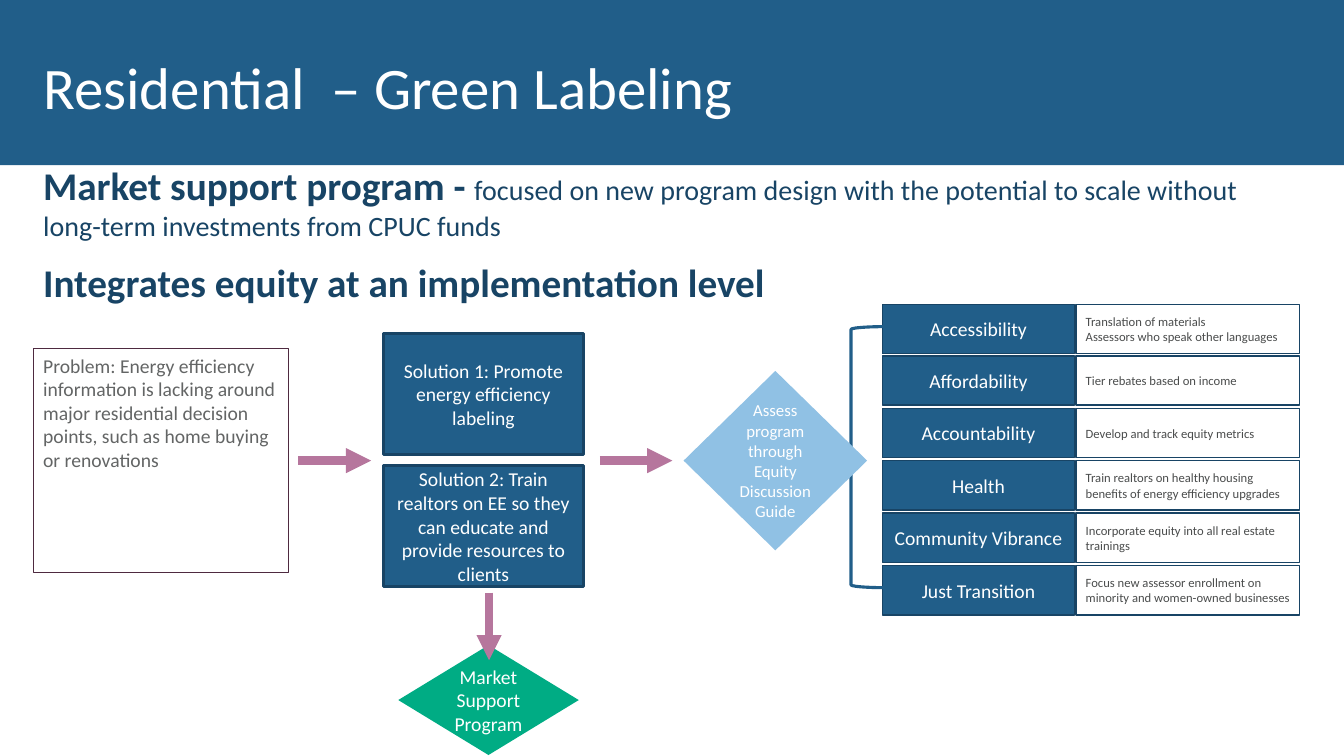
from lxml import etree
from pptx import Presentation
from pptx import util as u
from pptx.dml.color import RGBColor
from pptx.enum import shapes, text
from pptx.oxml.ns import qn

WHITE = RGBColor(0xFF, 0xFF, 0xFF)
BLUE = RGBColor(0x21, 0x5E, 0x89)
NAVY = RGBColor(0x18, 0x44, 0x65)
SKY = RGBColor(0x90, 0xC1, 0xE4)
GREEN = RGBColor(0x00, 0xAC, 0x84)
MAUVE = RGBColor(0xB6, 0x76, 0x9D)
PLUM = RGBColor(0x4E, 0x2A, 0x40)
GREY = RGBColor(0x63, 0x65, 0x65)
DARK_GREY = RGBColor(0x4A, 0x4C, 0x4C)

Kind = shapes.MSO_SHAPE
Anchor = text.MSO_ANCHOR
Align = text.PP_ALIGN

EQUITY_GOALS = [
    ("Accessibility", ["Translation of materials", "Assessors who speak other languages"]),
    ("Affordability", ["Tier rebates based on income"]),
    ("Accountability", ["Develop and track equity metrics"]),
    ("Health", ["Train realtors on healthy housing benefits of energy efficiency upgrades"]),
    ("Community Vibrance", ["Incorporate equity into all real estate trainings"]),
    ("Just Transition", ["Focus new assessor enrollment on minority and women-owned businesses"]),
]
SOLUTIONS = [
    "Solution 1: Promote energy efficiency labeling",
    "Solution 2: Train realtors on EE so they can educate and provide resources to clients",
]
ARROWS = [(296, 457, 368, 457), (595, 457, 667, 457), (485, 588, 485, 655)]


def apply(target, formats):
    for name, value in formats.items():
        setattr(target, name, value)


class SlideBuilder:
    font_name = "Calibri"
    px = 9144

    def __init__(self, presentation):
        apply(presentation, {"slide_width": self.px * 1333, "slide_height": self.px * 750})
        self.slide = presentation.slides.add_slide(presentation.slide_layouts[5])

    def scale(self, *lengths):
        return [u.Emu(length * self.px) for length in lengths]

    def fill_text(self, frame, paragraphs, color, anchor, align=Align.LEFT, margins=(10, 5), spacing=None):
        horizontal, vertical = self.scale(*margins)
        apply(frame, {
            "word_wrap": True, "auto_size": text.MSO_AUTO_SIZE.NONE, "vertical_anchor": anchor,
            "margin_left": horizontal, "margin_right": horizontal,
            "margin_top": vertical, "margin_bottom": vertical,
        })
        for index, runs in enumerate(paragraphs):
            paragraph = frame.add_paragraph() if index else frame.paragraphs[0]
            apply(paragraph, {"alignment": align, **(spacing or {})})
            for words, size, bold in runs:
                run = paragraph.add_run()
                run.text = words
                apply(run.font, {"name": self.font_name, "size": u.Pt(size), "bold": bold})
                run.font.color.rgb = color

    def title(self, box, words, size, band):
        title = self.slide.shapes.title
        apply(title, dict(zip(("left", "top", "width", "height"), self.scale(*box))))
        self.fill_text(title.text_frame, [[(words, size, False)]], WHITE, Anchor.MIDDLE,
                       spacing={"line_spacing": 0.9})
        band.element.addnext(title.element)

    def text_box(self, box, paragraphs, color, spacing):
        shape = self.slide.shapes.add_textbox(*self.scale(*box))
        self.fill_text(shape.text_frame, paragraphs, color, Anchor.TOP, spacing=spacing)

    def shape(self, kind, box, fill=None, line=None, line_width=1):
        shape = self.slide.shapes.add_shape(kind, *self.scale(*box))
        shape.shadow.inherit = False
        if fill is None:
            shape.fill.background()
        else:
            shape.fill.solid()
            shape.fill.fore_color.rgb = fill
        if line is None:
            shape.line.fill.background()
        else:
            shape.line.color.rgb = line
            shape.line.width = u.Pt(line_width)
        return shape

    def label(self, shape, lines, size=14, color=WHITE, anchor=Anchor.MIDDLE,
              align=Align.CENTER, margins=(10, 5)):
        paragraphs = [[(line, size, False)] for line in lines]
        self.fill_text(shape.text_frame, paragraphs, color, anchor, align, margins)

    def arrow(self, ends):
        connector = self.slide.shapes.add_connector(shapes.MSO_CONNECTOR.STRAIGHT, *self.scale(*ends))
        connector.line.color.rgb = MAUVE
        connector.line.width = u.Pt(6)
        properties = connector.element.spPr
        etree.SubElement(properties.find(qn("a:ln")), qn("a:tailEnd"), type="triangle")
        etree.SubElement(properties, qn("a:effectLst"))


def main():
    presentation = Presentation()
    builder = SlideBuilder(presentation)

    band = builder.shape(Kind.RECTANGLE, (0, 0, 1333, 164), BLUE)
    builder.title((33, 38, 1209, 103), "Residential  – Green Labeling", 42, band)

    problem = builder.shape(Kind.RECTANGLE, (33, 346, 253, 222), line=PLUM, line_width=0.75)
    builder.label(problem, ["Problem: Energy efficiency information is lacking around major "
                            "residential decision points, such as home buying or renovations"],
                  color=GREY, anchor=Anchor.TOP, align=Align.LEFT)

    for index, (goal, actions) in enumerate(EQUITY_GOALS):
        top = 302 + index * 259 // 5
        goal_cell = builder.shape(Kind.RECTANGLE, (875, top, 191, 49), BLUE, NAVY)
        builder.label(goal_cell, [goal])
        action_cell = builder.shape(Kind.RECTANGLE, (1067, top, 222, 49), line=NAVY)
        builder.label(action_cell, actions, 9, DARK_GREY, align=Align.LEFT)

    bracket = builder.shape(Kind.LEFT_BRACKET, (844, 324, 35, 259), line=BLUE, line_width=2.25)
    bracket.adjustments[0] = 0.08

    for index, solution in enumerate(SOLUTIONS):
        box = builder.shape(Kind.RECTANGLE, (380, 331 + index * 131, 199, 120), BLUE, NAVY, 2)
        builder.label(box, [solution])

    program = builder.shape(Kind.DIAMOND, (395, 640, 179, 109), GREEN)
    builder.label(program, ["Market Support Program"], margins=(0, 0))

    for ends in ARROWS:
        builder.arrow(ends)

    assessment = builder.shape(Kind.DIAMOND, (678, 368, 182, 178), SKY)
    builder.label(assessment, ["Assess program through Equity Discussion Guide"], 12, margins=(0, 0))

    builder.text_box((33, 155, 1256, 172), [
        [("Market support program - ", 28, True),
         ("focused on new program design with the potential to scale without "
          "long-term investments from CPUC funds", 20, False)],
        [("Integrates equity at an implementation level", 28, True)],
    ], NAVY, {"space_before": u.Pt(10), "space_after": u.Pt(2)})

    presentation.save("out.pptx")


if __name__ == "__main__":
    main()
